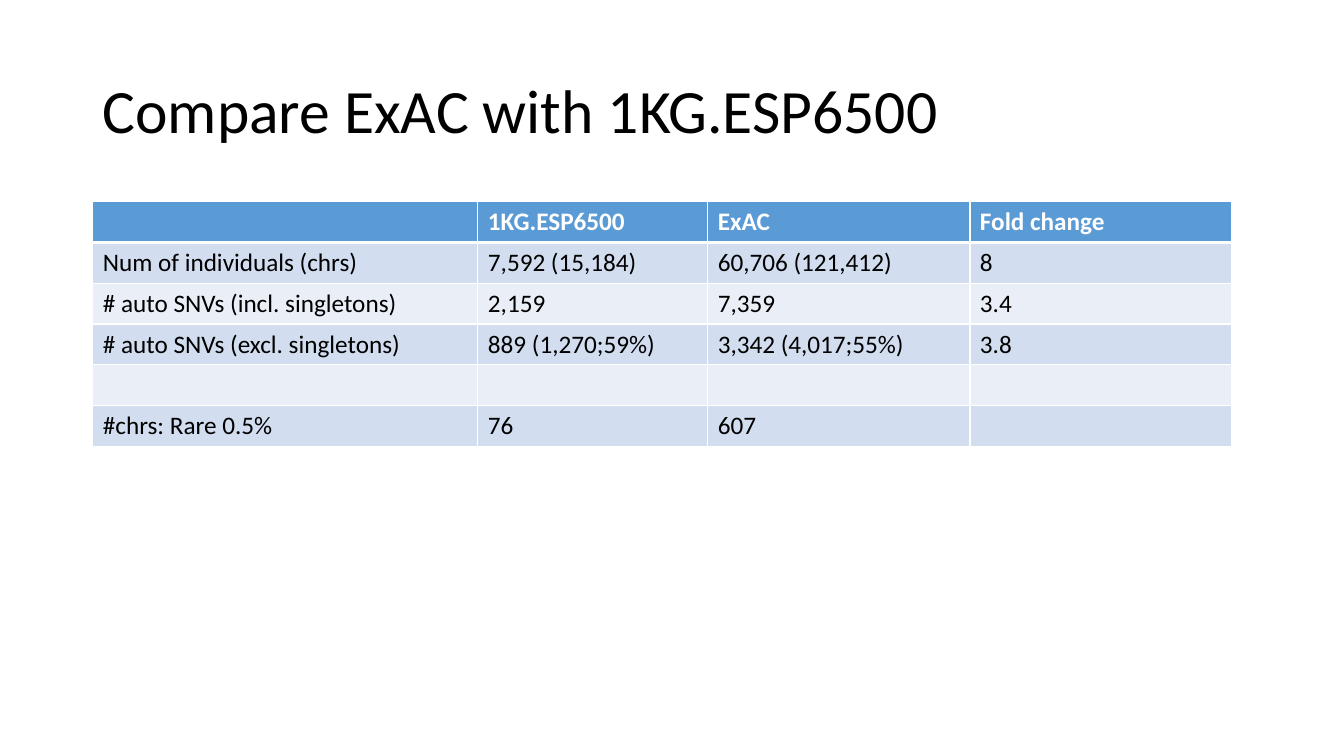
from dataclasses import dataclass

from lxml import etree
from pptx import Presentation
from pptx import util as u
from pptx.dml.color import RGBColor
from pptx.enum import text
from pptx.oxml import ns

COLORS = {"header": "5B9BD5", "odd": "D2DEEF", "even": "EAEFF7",
          "white": "FFFFFF", "black": "000000"}
FONT = "Calibri"
COLUMN_WIDTHS = (3.82, 2.28, 2.6, 2.6)
TABLE_HEIGHT = 2.43


@dataclass(frozen=True)
class Row:
    cells: tuple[str, str, str, str]


ROWS = (
    Row(("", "1KG.ESP6500", "ExAC", "Fold change")),
    Row(("Num of individuals (chrs)", "7,592 (15,184)", "60,706 (121,412)", "8")),
    Row(("# auto SNVs (incl. singletons)", "2,159", "7,359", "3.4")),
    Row(("# auto SNVs (excl. singletons)", "889 (1,270;59%)", "3,342 (4,017;55%)", "3.8")),
    Row(("", "", "", "")),
    Row(("#chrs: Rare 0.5%", "76", "607", "")),
)


def write(p, words: str, color: str, **font_format) -> None:
    """Add one formatted run to a paragraph."""
    r = p.add_run()
    r.text = words
    for name, value in {"name": FONT, **font_format}.items():
        setattr(r.font, name, value)
    r.font.color.rgb = RGBColor.from_string(COLORS[color])


def add_borders(cell, widths: dict[str, float]) -> None:
    """Draw white cell borders; widths are points by side."""
    tc_pr = cell._tc.get_or_add_tcPr()
    for side, width in widths.items():
        ln = etree.SubElement(tc_pr, ns.qn(f"a:ln{side}"), w=str(u.Pt(width)))
        fill = etree.SubElement(ln, ns.qn("a:solidFill"))
        etree.SubElement(fill, ns.qn("a:srgbClr"), val=COLORS["white"])


def add_title(s, words: str) -> None:
    sp = s.shapes.add_textbox(u.Inches(0.92), u.Inches(0.4), u.Inches(11.5), u.Inches(1.45))
    tf = sp.text_frame
    for name, value in {"word_wrap": True, "vertical_anchor": text.MSO_ANCHOR.MIDDLE}.items():
        setattr(tf, name, value)
    p = tf.paragraphs[0]
    p.line_spacing = 0.9
    write(p, words, "black", size=u.Pt(44))


def add_comparison(s, rows: tuple[Row, ...]) -> None:
    table = s.shapes.add_table(
        len(rows), len(COLUMN_WIDTHS), u.Inches(0.92), u.Inches(2),
        u.Inches(sum(COLUMN_WIDTHS)), u.Inches(TABLE_HEIGHT)).table
    for column, width in zip(table.columns, COLUMN_WIDTHS):
        column.width = u.Inches(width)

    for i, row in enumerate(rows):
        header = i == 0
        fill = "header" if header else ("even", "odd")[i % 2]
        # The rule under the header is heavier than the others
        borders = {"L": 1, "R": 1, "T": 3 if i == 1 else 1, "B": 3 if header else 1}
        for j, words in enumerate(row.cells):
            cell = table.cell(i, j)
            add_borders(cell, borders)
            cell.fill.solid()
            cell.fill.fore_color.rgb = RGBColor.from_string(COLORS[fill])
            if words:
                write(cell.text_frame.paragraphs[0], words,
                      "white" if header else "black", size=u.Pt(18), bold=header)


def main() -> None:
    prs = Presentation()
    prs.slide_width, prs.slide_height = u.Inches(13.33), u.Inches(7.5)
    s = prs.slides.add_slide(prs.slide_layouts[6])

    # Title
    add_title(s, "Compare ExAC with 1KG.ESP6500")

    # Comparison table
    add_comparison(s, ROWS)

    prs.save("out.pptx")


if __name__ == "__main__":
    main()
